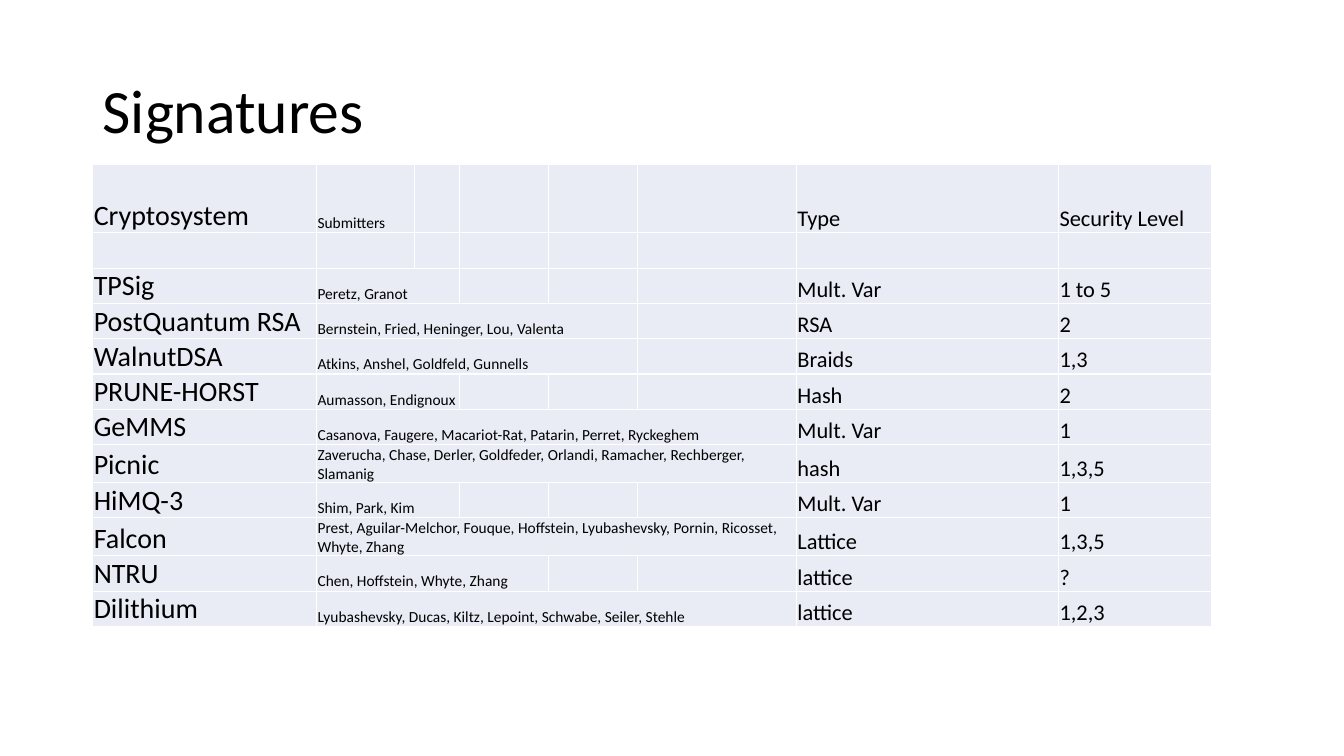
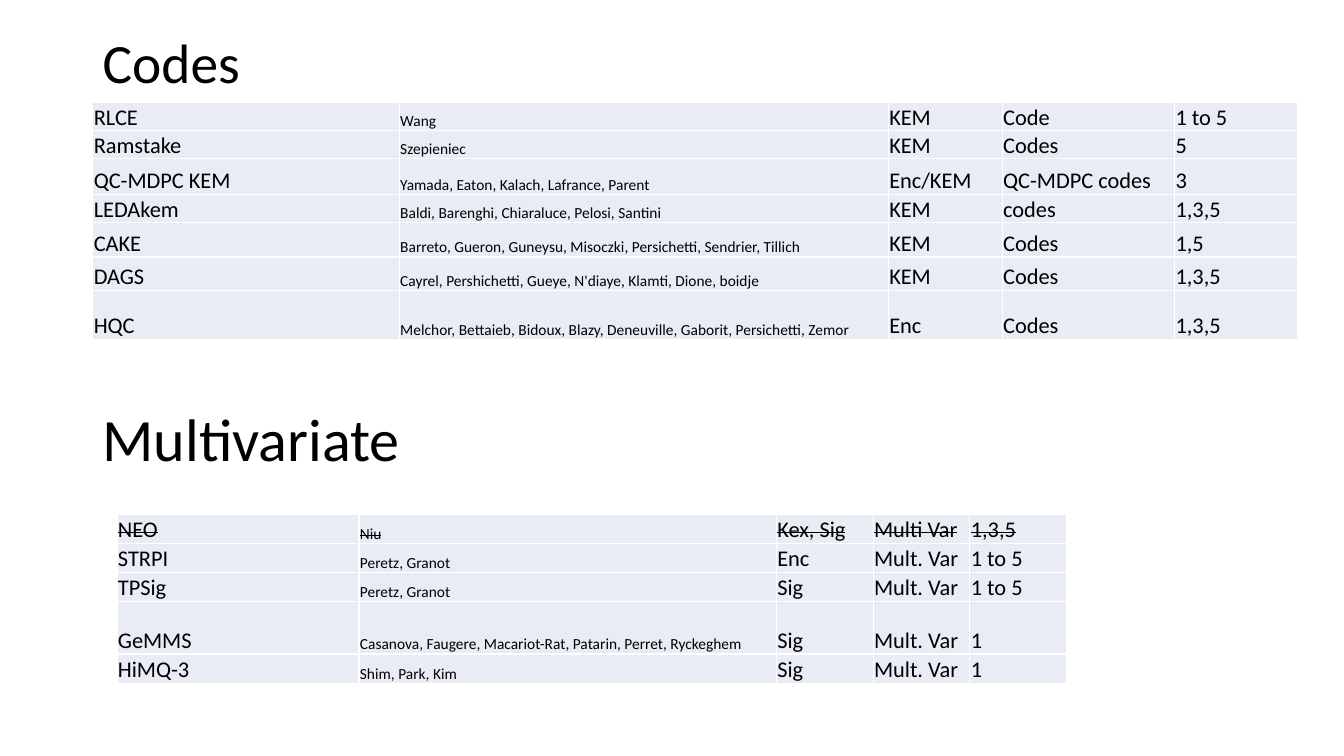
import dataclasses

import lxml.etree
import pptx
import pptx.dml.color
import pptx.enum.text
import pptx.oxml.ns
import pptx.util

Inches = pptx.util.Inches
Pt = pptx.util.Pt


@dataclasses.dataclass(frozen=True)
class Theme:
    font: str = "Calibri"
    text: str = "000000"
    cell: str = "E9EBF5"
    border: str = "FFFFFF"
    border_width: float = 1
    title: float = 44
    compact_title: float = 39.6
    section_title: float = 42.9
    name: float = 20
    body: float = 16
    small: float = 11


THEME = Theme()

SIGNATURE_WIDTHS = [2.22, 0.97, 0.45, 0.88, 0.88, 1.58, 2.6, 1.52]
SIGNATURE_HEIGHTS = [0.68] + [0.35] * 11
SIGNATURES = [
    ("Cryptosystem", "Submitters", 1, "Type", "Security Level"),
    ("", "", 1, "", ""),
    ("TPSig", "Peretz, Granot", 2, "Mult. Var", "1 to 5"),
    ("PostQuantum RSA", "Bernstein, Fried, Heninger, Lou, Valenta", 4, "RSA", "2"),
    ("WalnutDSA", "Atkins, Anshel, Goldfeld, Gunnells", 4, "Braids", "1,3"),
    ("PRUNE-HORST", "Aumasson, Endignoux", 2, "Hash", "2"),
    ("GeMMS", "Casanova, Faugere, Macariot-Rat, Patarin, Perret, Ryckeghem", 5, "Mult. Var", "1"),
    ("Picnic", "Zaverucha, Chase, Derler, Goldfeder, Orlandi, Ramacher, Rechberger, Slamanig",
     5, "hash", "1,3,5"),
    ("HiMQ-3", "Shim, Park, Kim", 2, "Mult. Var", "1"),
    ("Falcon", "Prest, Aguilar-Melchor, Fouque, Hoffstein, Lyubashevsky, Pornin, Ricosset, "
     "Whyte, Zhang", 5, "Lattice", "1,3,5"),
    ("NTRU", "Chen, Hoffstein, Whyte, Zhang", 3, "lattice", "?"),
    ("Dilithium", "Lyubashevsky, Ducas, Kiltz, Lepoint, Schwabe, Seiler, Stehle",
     5, "lattice", "1,2,3"),
]

CODE_WIDTHS = [3.04, 4.85, 1.13, 1.71, 1.22]
CODE_HEIGHTS = [0.27, 0.27, 0.36, 0.27, 0.34, 0.33, 0.49]
CODES = [
    ("RLCE", "Wang", "KEM", "Code", "1 to 5"),
    ("Ramstake", "Szepieniec", "KEM", "Codes", "5"),
    ("QC-MDPC KEM", "Yamada, Eaton, Kalach, Lafrance, Parent", "Enc/KEM", "QC-MDPC codes", "3"),
    ("LEDAkem", "Baldi, Barenghi, Chiaraluce, Pelosi, Santini", "KEM", "codes", "1,3,5"),
    ("CAKE", "Barreto, Gueron, Guneysu, Misoczki, Persichetti, Sendrier, Tillich",
     "KEM", "Codes", "1,5"),
    ("DAGS", "Cayrel, Pershichetti, Gueye, N'diaye, Klamti, Dione, boidje",
     "KEM", "Codes", "1,3,5"),
    ("HQC", "Melchor, Bettaieb, Bidoux, Blazy, Deneuville, Gaborit, Persichetti, Zemor",
     "Enc", "Codes", "1,3,5"),
]

MULTIVARIATE_WIDTHS = [2.4, 4.14] + [0.96] * 3
MULTIVARIATE_HEIGHTS = [0.29, 0.29, 0.29, 0.52, 0.29]
MULTIVARIATE = [
    ("NEO", "Niu", "Kex, Sig", "Multi Var", "1,3,5"),
    ("STRPI", "Peretz, Granot", "Enc", "Mult. Var", "1 to 5"),
    ("TPSig", "Peretz, Granot", "Sig", "Mult. Var", "1 to 5"),
    ("GeMMS", "Casanova, Faugere, Macariot-Rat, Patarin, Perret, Ryckeghem",
     "Sig", "Mult. Var", "1"),
    ("HiMQ-3", "Shim, Park, Kim", "Sig", "Mult. Var", "1"),
]


def rgb(value):
    return pptx.dml.color.RGBColor.from_string(value)


def set_font(para, size):
    para.font.name = THEME.font
    para.font.size = Pt(size)
    para.font.color.rgb = rgb(THEME.text)


def add_title(page, text, top, width, height, size, spacing=0.9):
    box = page.shapes.add_textbox(Inches(0.92), Inches(top), Inches(width), Inches(height))
    frame = box.text_frame
    frame.word_wrap = True
    frame.vertical_anchor = pptx.enum.text.MSO_ANCHOR.MIDDLE
    para = frame.paragraphs[0]
    para.text = text
    para.line_spacing = spacing
    set_font(para, size)


def set_borders(cell):
    properties = cell._tc.get_or_add_tcPr()
    qn = pptx.oxml.ns.qn
    for side in ("a:lnL", "a:lnR", "a:lnT", "a:lnB"):
        line = lxml.etree.SubElement(properties, qn(side), w=str(Pt(THEME.border_width)))
        fill = lxml.etree.SubElement(line, qn("a:solidFill"))
        lxml.etree.SubElement(fill, qn("a:srgbClr"), val=THEME.border)


def fill_cell(cell, text, size, struck):
    set_borders(cell)
    cell.fill.solid()
    cell.fill.fore_color.rgb = rgb(THEME.cell)
    cell.vertical_anchor = pptx.enum.text.MSO_ANCHOR.BOTTOM
    cell.margin_left = cell.margin_right = cell.margin_top = Inches(0.01)
    cell.margin_bottom = 0
    para = cell.text_frame.paragraphs[0]
    set_font(para, size if text else THEME.small)
    if text:
        span = para.add_run()
        span.text = text
        if struck:
            span._r.get_or_add_rPr().set("strike", "sngStrike")


def add_grid(page, left, top, widths, heights, rows, name_size=THEME.body, struck_rows=()):
    frame = page.shapes.add_table(len(rows), len(widths), Inches(left), Inches(top),
                                  Inches(sum(widths)), Inches(sum(heights)))
    table = frame.table
    table.first_row = False
    table.horz_banding = False
    for column, width in zip(table.columns, widths):
        column.width = Inches(width)
    for row, height in zip(table.rows, heights):
        row.height = Inches(height)
    sizes = [name_size, THEME.small] + [THEME.body] * (len(widths) - 2)
    for row_index, texts in enumerate(rows):
        for column_index, (text, size) in enumerate(zip(texts, sizes)):
            fill_cell(table.cell(row_index, column_index), text, size, row_index in struck_rows)
    return table


def add_signatures(page):
    add_title(page, "Signatures", 0.4, 11.5, 1.45, THEME.title)
    rows = [(name, submitters, "", "", "", "", kind, level)
            for name, submitters, _, kind, level in SIGNATURES]
    table = add_grid(page, 0.92, 1.63, SIGNATURE_WIDTHS, SIGNATURE_HEIGHTS, rows, THEME.name)
    for row_index, (_, _, columns, _, _) in enumerate(SIGNATURES):
        if columns > 1:
            table.cell(row_index, 1).merge(table.cell(row_index, columns))


def add_codes_and_multivariate(page):
    add_title(page, "Codes", 0.29, 11.31, 0.73, THEME.compact_title)
    add_grid(page, 0.92, 1.02, CODE_WIDTHS, CODE_HEIGHTS, CODES)
    add_title(page, "Multivariate", 4.04, 11.31, 0.73, THEME.section_title, 0.8)
    add_grid(page, 1.16, 5.1, MULTIVARIATE_WIDTHS, MULTIVARIATE_HEIGHTS, MULTIVARIATE,
             struck_rows=(0,))


def main():
    deck = pptx.Presentation()
    deck.slide_width = Inches(13.33)
    deck.slide_height = Inches(7.5)
    for build in (add_signatures, add_codes_and_multivariate):
        build(deck.slides.add_slide(deck.slide_layouts[6]))
    deck.save("out.pptx")


if __name__ == "__main__":
    main()
